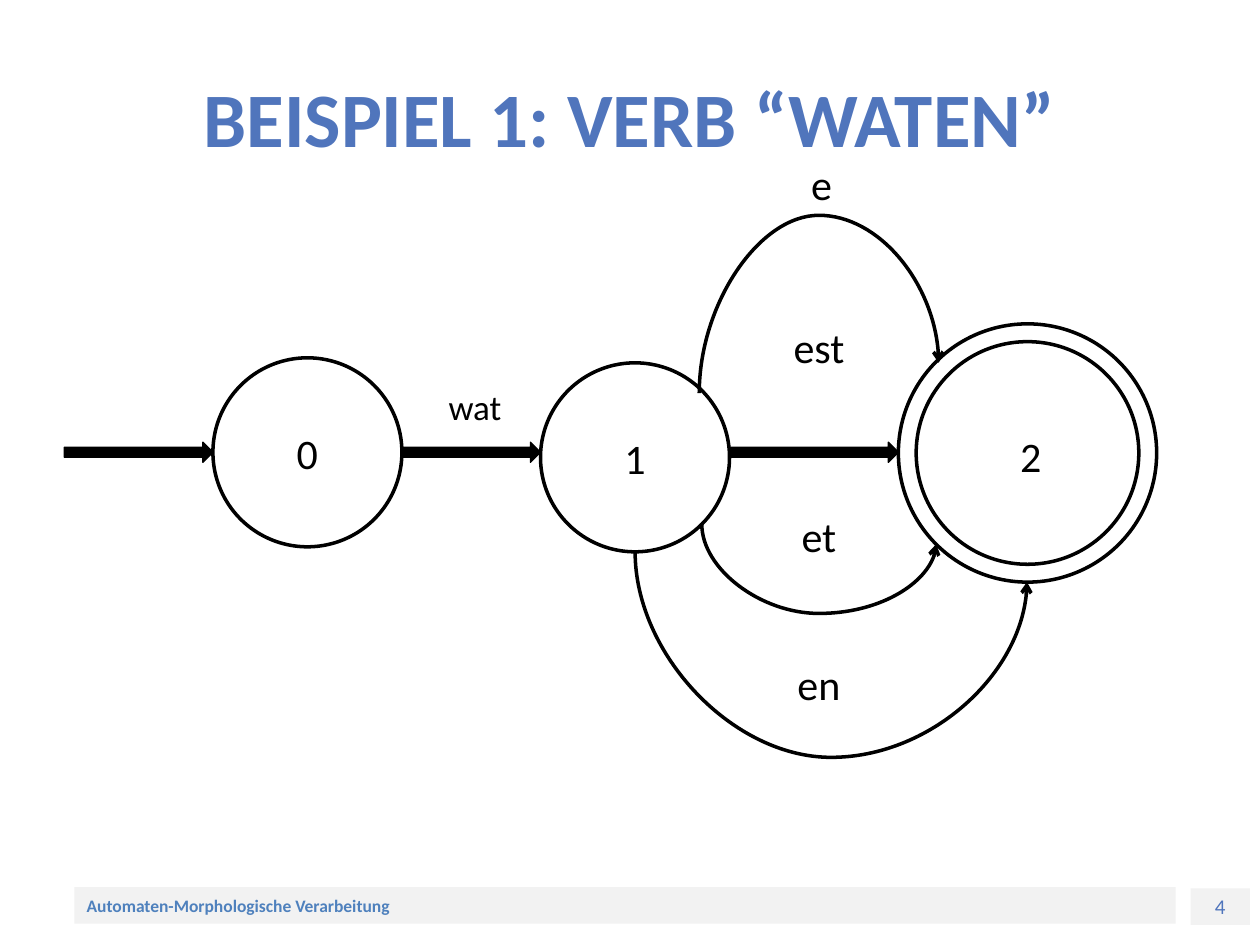
"""Build the slide with the finite automaton for the German verb "waten"."""
from lxml import etree
from pptx import Presentation
from pptx.dml.color import RGBColor
from pptx.enum.shapes import MSO_CONNECTOR, MSO_SHAPE
from pptx.enum.text import MSO_ANCHOR, PP_ALIGN
from pptx.oxml.ns import qn
from pptx.util import Inches, Pt

CURVE = MSO_CONNECTOR.CURVE
RECTANGLE, OVAL = MSO_SHAPE.RECTANGLE, MSO_SHAPE.OVAL
DONUT, RIGHT_ARROW = MSO_SHAPE.DONUT, MSO_SHAPE.RIGHT_ARROW
MIDDLE = MSO_ANCHOR.MIDDLE
LEFT, CENTER = PP_ALIGN.LEFT, PP_ALIGN.CENTER
BLACK, WHITE, GREY = "000000", "FFFFFF", "F2F2F2"
TITLE_BLUE, FOOTER_BLUE = "5075BC", "4F81BD"


def write(target, text, size=24, color=BLACK, bold=False, align=CENTER, wrap=True):
    frame = target.text_frame
    frame.word_wrap = wrap
    frame.vertical_anchor = MIDDLE
    paragraph = frame.paragraphs[0]
    paragraph.alignment = align
    run = paragraph.add_run()
    run.text = text
    run.font.name = "Calibri"
    run.font.size = Pt(size)
    run.font.bold = bold
    run.font.color.rgb = RGBColor.from_string(color)


def draw(kind, left, top, width, height, fill=WHITE, line_width=0):
    part = slide.shapes.add_shape(
        kind, Inches(left), Inches(top), Inches(width), Inches(height))
    part.shadow.inherit = False
    part.fill.solid()
    part.fill.fore_color.rgb = RGBColor.from_string(fill)
    if line_width:
        part.line.color.rgb = RGBColor.from_string(BLACK)
        part.line.width = Pt(line_width)
    else:
        part.line.fill.background()
    return part


prs = Presentation()
prs.slide_width, prs.slide_height = Inches(10), Inches(7.5)
slide = prs.slides.add_slide(prs.slide_layouts[5])

title = slide.shapes.title
title.left, title.top = Inches(0.5), Inches(0.3)
title.width, title.height = Inches(9), Inches(1.25)
write(title, "BEISPIEL 1: VERB “WATEN”", size=44, color=TITLE_BLUE, bold=True)

page_number = draw(RECTANGLE, 9.45, 7.05, 0.47, 0.29, fill=GREY)
write(page_number, "4", size=12, color=TITLE_BLUE)
footer = draw(RECTANGLE, 0.59, 7.04, 8.74, 0.29, fill=GREY)
write(footer, "Automaten-Morphologische Verarbeitung", size=10,
      color=FOOTER_BLUE, bold=True, align=LEFT)

for state, left, top in [("0", 1.69, 2.84), ("1", 4.29, 2.88)]:
    write(draw(OVAL, left, top, 1.5, 1.5, line_width=2), state)
final_state = draw(DONUT, 7.13, 2.57, 2.05, 2.05, line_width=2)
final_state.adjustments[0] = 0.069

for start, end in [(0.51, 1.69), (3.19, 4.29), (5.79, 7.13)]:
    draw(RIGHT_ARROW, start, 3.51, end - start, 0.16, fill=BLACK, line_width=0.75)

arcs = [
    (5.55, 3.12, 7.45, 2.88, 1.71, 90),
    (5.57, 4.16, 7.43, 4.32, 4.87, 270),
    (5.04, 4.38, 8.15, 4.62, 6.01, 270),
]
for x1, y1, x2, y2, peak, angle in arcs:
    turn = 1 if angle == 90 else -1
    center_x, center_y = (x1 + x2) / 2, (y1 + y2) / 2
    half_width, half_height = turn * (y2 - y1) / 2, turn * (x2 - x1) / 2
    arc = slide.shapes.add_connector(
        CURVE,
        Inches(center_x - half_width), Inches(center_y + half_height),
        Inches(center_x + half_width), Inches(center_y - half_height))
    arc.line.color.rgb = RGBColor.from_string(BLACK)
    arc.line.width = Pt(2)
    properties = arc.element.spPr
    properties.find(qn("a:xfrm")).set("rot", str(angle * 60000))
    bend = round((peak - y1) / (y2 - y1) * 100000)
    guides = properties.find(qn("a:prstGeom")).get_or_add_avLst()
    etree.SubElement(guides, qn("a:gd"), name="adj1", fmla=f"val {bend}")
    etree.SubElement(properties.find(qn("a:ln")), qn("a:tailEnd"), type="arrow")
    etree.SubElement(properties, qn("a:effectLst"))

labels = [
    ("2", 7.68, 3.12, 1, 24),
    ("est", 6, 2.25, 1, 24),
    ("et", 6, 3.75, 1, 24),
    ("en", 6, 4.93, 1, 24),
    ("e", 6.02, 1.15, 0.61, 24),
    ("wat", 3.27, 2.73, 1, 20),
]
for text, left, top, height, size in labels:
    label = slide.shapes.add_textbox(
        Inches(left), Inches(top), Inches(1), Inches(height))
    write(label, text, size=size, wrap=False)

prs.save("out.pptx")
